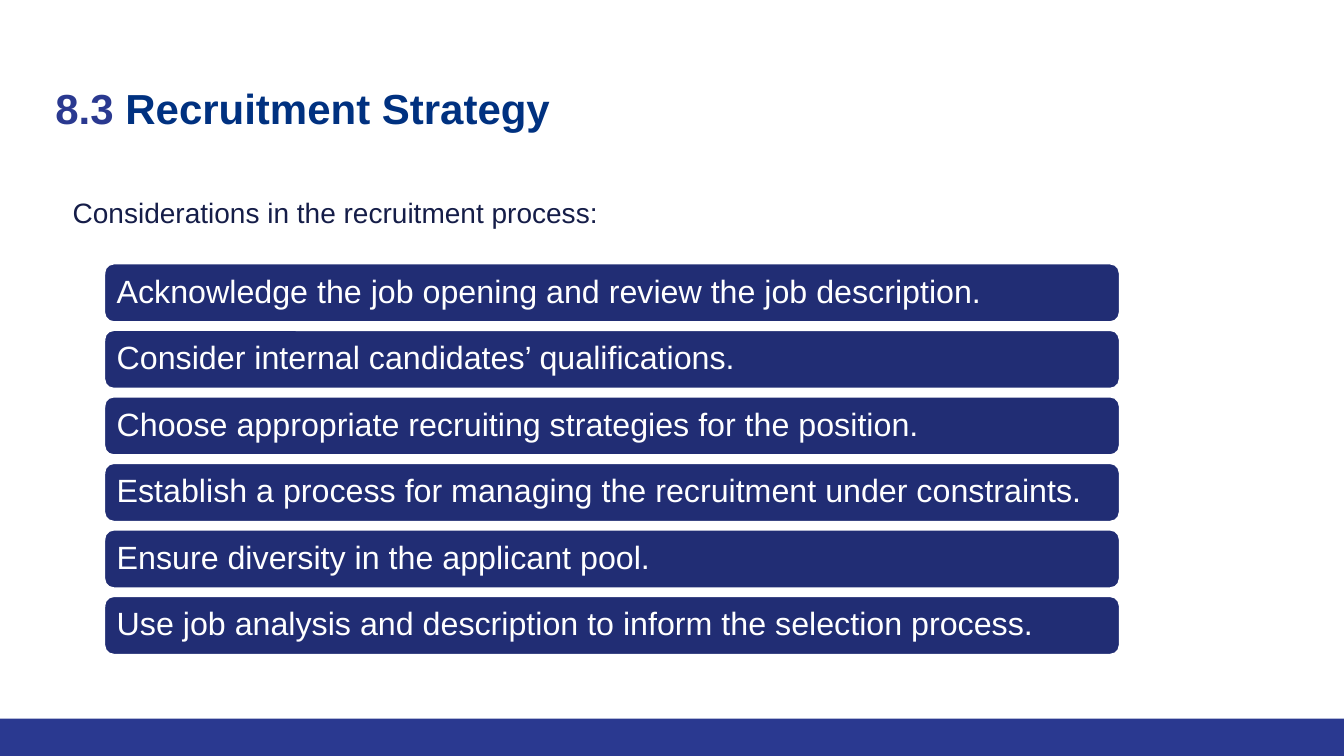
import dataclasses

import pptx
import pptx.dml.color
import pptx.enum.shapes
import pptx.enum.text
import pptx.util

WIDTH, HEIGHT = 13.33, 7.5
INDIGO, NAVY, MIDNIGHT, BAR, WHITE = "2A3990", "003180", "151D48", "212D74", "FFFFFF"
BAR_LEFT, BAR_TOP, BAR_WIDTH, BAR_HEIGHT, BAR_PITCH = 1.03, 2.61, 10.08, 0.59, 0.66
FOOTER_HEIGHT = 0.37
SHAPE = pptx.enum.shapes.MSO_SHAPE


@dataclasses.dataclass(frozen=True)
class Box:
    left: float
    top: float
    width: float
    height: float

    def emu(self) -> list[int]:
        return [pptx.util.Inches(v) for v in dataclasses.astuple(self)]


@dataclasses.dataclass(frozen=True)
class Consideration:
    row: int
    text: str

    def box(self) -> Box:
        return Box(BAR_LEFT, BAR_TOP + self.row * BAR_PITCH, BAR_WIDTH, BAR_HEIGHT)


CONSIDERATIONS = [
    Consideration(row, text)
    for row, text in enumerate([
        "Acknowledge the job opening and review the job description.",
        "Consider internal candidates’ qualifications.",
        "Choose appropriate recruiting strategies for the position.",
        "Establish a process for managing the recruitment under constraints.",
        "Ensure diversity in the applicant pool.",
        "Use job analysis and description to inform the selection process.",
    ])
]


def rgb(value: str) -> pptx.dml.color.RGBColor:
    return pptx.dml.color.RGBColor.from_string(value)


def write(sp, *runs: tuple[str, str], size: float, bold: bool = False,
          spacing: float = 1.0, indent: float = 0.0, middle: bool = False) -> None:
    anchors = pptx.enum.text.MSO_ANCHOR
    tf = sp.text_frame
    tf.word_wrap = True
    tf.vertical_anchor = anchors.MIDDLE if middle else anchors.TOP
    tf.margin_right = tf.margin_top = tf.margin_bottom = pptx.util.Inches(0.1)
    tf.margin_left = pptx.util.Inches(0.1 + indent)
    p = tf.paragraphs[0]
    p.alignment = pptx.enum.text.PP_ALIGN.LEFT
    p.line_spacing = spacing
    for text, color in runs:
        r = p.add_run()
        r.text = text
        r.font.name = "Arial"
        r.font.size = pptx.util.Pt(size)
        r.font.bold = bold
        r.font.color.rgb = rgb(color)


def add_shape(s, kind: SHAPE, box: Box, fill: str, line: str | None = None):
    sp = s.shapes.add_shape(kind, *box.emu())
    sp.shadow.inherit = False
    sp.fill.solid()
    sp.fill.fore_color.rgb = rgb(fill)
    if line:
        sp.line.color.rgb = rgb(line)
        sp.line.width = pptx.util.Pt(2)
    else:
        sp.line.fill.background()
    return sp


def main() -> None:
    prs = pptx.Presentation()
    prs.slide_width = pptx.util.Inches(WIDTH)
    prs.slide_height = pptx.util.Inches(HEIGHT)
    s = prs.slides.add_slide(prs.slide_layouts[6])

    add_shape(s, SHAPE.RECTANGLE,
              Box(0, HEIGHT - FOOTER_HEIGHT, WIDTH, FOOTER_HEIGHT), INDIGO)

    title = s.shapes.add_textbox(*Box(0.45, 0.72, 12.42, 0.89).emu())
    write(title, ("8.3 ", INDIGO), ("Recruitment Strategy", NAVY), size=30, bold=True)

    intro = s.shapes.add_textbox(*Box(0.45, 1.79, 7.61, 0.6).emu())
    write(intro, ("Considerations in the recruitment process:", MIDNIGHT),
          size=20, spacing=1.15, indent=0.17)

    for item in CONSIDERATIONS:
        sp = add_shape(s, SHAPE.ROUNDED_RECTANGLE, item.box(), BAR, line=WHITE)
        write(sp, (item.text, WHITE), size=23, spacing=0.9, middle=True)

    prs.save("out.pptx")


if __name__ == "__main__":
    main()
